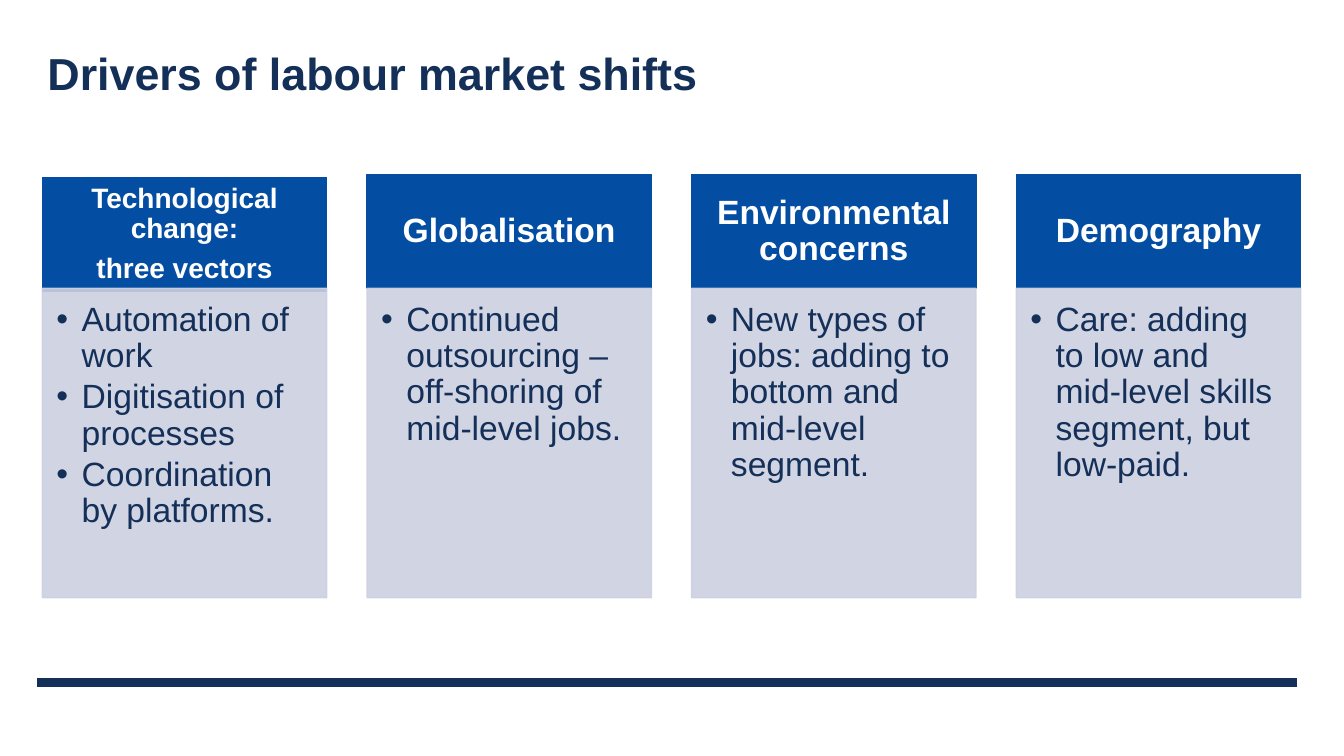
from lxml import etree
from pptx import Presentation
from pptx.dml.color import RGBColor
from pptx.enum.shapes import MSO_CONNECTOR, MSO_SHAPE
from pptx.enum.text import MSO_ANCHOR, MSO_AUTO_SIZE, PP_ALIGN
from pptx.oxml.ns import qn
from pptx.util import Inches, Pt

NAVY = RGBColor(0x14, 0x30, 0x58)
BLUE = RGBColor(0x03, 0x4E, 0xA2)
LAVENDER = RGBColor(0xCC, 0xD0, 0xE0)
WHITE = RGBColor(0xFF, 0xFF, 0xFF)
FONT = "Arial"

COLUMN_LEFT, COLUMN_STEP, COLUMN_WIDTH = 0.42, 3.22, 2.82
HEADER_TOP, HEADER_HEIGHT = 1.73, 1.13
BODY_TOP, BODY_HEIGHT = 2.86, 3.07

# Header paragraphs, header size, header offset down, bullets
DRIVERS = [
    (["Technological change:", "three vectors"], 20, 0.03,
     ["Automation of work", "Digitisation of processes",
      "Coordination by platforms."]),
    (["Globalisation"], 24, 0,
     ["Continued outsourcing – off-shoring of mid-level jobs."]),
    (["Environmental concerns"], 24, 0,
     ["New types of jobs: adding to bottom and mid-level segment."]),
    (["Demography"], 24, 0,
     ["Care: adding to low and mid-level skills segment, but low-paid."]),
]


def add_run(paragraph, text, size, color, bold=False):
    run = paragraph.add_run()
    run.text = text
    run.font.name = FONT
    run.font.size = Pt(size)
    run.font.bold = bold
    run.font.color.rgb = color


def add_panel(slide, left, top, height, color, margins):
    """Add a filled rectangle; margins are left, top, right, bottom."""
    shape = slide.shapes.add_shape(
        MSO_SHAPE.RECTANGLE, Inches(left), Inches(top),
        Inches(COLUMN_WIDTH), Inches(height))
    shape.shadow.inherit = False
    shape.fill.solid()
    shape.fill.fore_color.rgb = color
    shape.line.color.rgb = color
    shape.line.width = Pt(1)
    frame = shape.text_frame
    frame.word_wrap = True
    (frame.margin_left, frame.margin_top,
     frame.margin_right, frame.margin_bottom) = map(Inches, margins)
    return shape


def set_opacity(shape, percent):
    """Apply one opacity to the fill and the outline."""
    for color in shape._element.spPr.iter(qn("a:srgbClr")):
        etree.SubElement(color, qn("a:alpha"), val=str(percent * 1000))


def add_bullet(paragraph):
    properties = paragraph._p.get_or_add_pPr()
    properties.set("marL", str(Inches(0.25)))
    properties.set("indent", str(-Inches(0.25)))
    etree.SubElement(properties, qn("a:buFont"), typeface=FONT)
    etree.SubElement(properties, qn("a:buChar"), char="•")


def add_paragraphs(frame, texts, size, color, align, space_share,
                   bold=False, bulleted=False):
    for index, text in enumerate(texts):
        paragraph = frame.paragraphs[0] if index == 0 else frame.add_paragraph()
        paragraph.alignment = align
        paragraph.line_spacing = 0.9
        paragraph.space_after = Pt(size * space_share)
        if bulleted:
            add_bullet(paragraph)
        add_run(paragraph, text, size, color, bold)


def add_driver(slide, left, header, size, offset, bullets):
    side, edge = (0.16, 0.09) if size == 20 else (0.19, 0.11)
    header_panel = add_panel(slide, left, HEADER_TOP + offset, HEADER_HEIGHT,
                             BLUE, (side, edge, side, edge))
    header_panel.text_frame.vertical_anchor = MSO_ANCHOR.MIDDLE
    add_paragraphs(header_panel.text_frame, header, size, WHITE,
                   PP_ALIGN.CENTER, 0.35, bold=True)

    body_panel = add_panel(slide, left, BODY_TOP, BODY_HEIGHT,
                           LAVENDER, (0.14, 0.14, 0.19, 0.21))
    set_opacity(body_panel, 90)
    body_panel.text_frame.vertical_anchor = MSO_ANCHOR.TOP
    add_paragraphs(body_panel.text_frame, bullets, 24, NAVY,
                   PP_ALIGN.LEFT, 0.15, bulleted=True)


def add_footer_rule(slide):
    rule = slide.shapes.add_connector(
        MSO_CONNECTOR.STRAIGHT, Inches(0.37), Inches(6.77),
        Inches(12.86), Inches(6.77))
    rule.line.color.rgb = NAVY
    rule.line.width = Pt(6)
    etree.SubElement(rule._element.spPr, qn("a:effectLst"))


def set_title(slide, text):
    title = slide.shapes.title
    title.left, title.top = Inches(0.37), Inches(0.3)
    title.width, title.height = Inches(12.49), Inches(0.85)
    frame = title.text_frame
    frame.auto_size = MSO_AUTO_SIZE.NONE
    frame.vertical_anchor = MSO_ANCHOR.MIDDLE
    paragraph = frame.paragraphs[0]
    paragraph.alignment = PP_ALIGN.LEFT
    add_run(paragraph, text, 32, NAVY, bold=True)


def main():
    presentation = Presentation()
    presentation.slide_width = Inches(13.33)
    presentation.slide_height = Inches(7.5)
    slide = presentation.slides.add_slide(presentation.slide_layouts[5])
    add_footer_rule(slide)
    set_title(slide, "Drivers of labour market shifts")
    for index, driver in enumerate(DRIVERS):
        add_driver(slide, COLUMN_LEFT + index * COLUMN_STEP, *driver)
    presentation.save("out.pptx")


if __name__ == "__main__":
    main()
